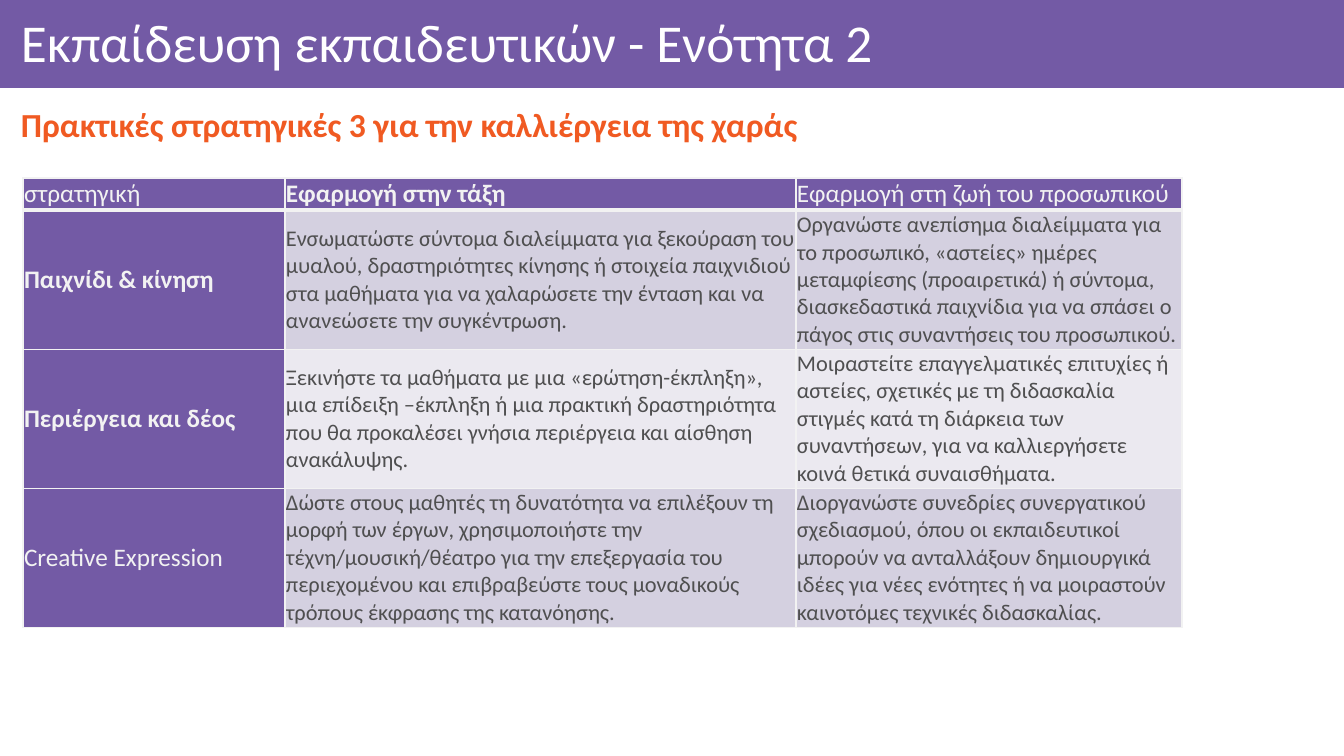
from lxml import etree
from pptx import Presentation
from pptx import util as u
from pptx.dml.color import RGBColor
from pptx.enum import shapes, text
from pptx.oxml import ns

EMU_PER_PX = 914400 / 100.8
FONT = "Calibri"
PURPLE = RGBColor(0x73, 0x5A, 0xA5)
ORANGE = RGBColor(0xF0, 0x5A, 0x22)
WHITE = RGBColor(0xFF, 0xFF, 0xFF)
OFF_WHITE = RGBColor(0xF2, 0xF2, 0xF2)
GREY = RGBColor(0x4F, 0x4F, 0x50)
BANDS = (RGBColor(0xD4, 0xD0, 0xE0), RGBColor(0xEB, 0xE9, 0xF0))

COLUMN_WIDTHS = (262, 511, 386)
ROW_HEIGHTS = (32, 139, 139, 139)
BOLD_LABELS = ("Εφαρμογή στην τάξη", "Παιχνίδι & κίνηση", "Περιέργεια και δέος")
STRATEGIES = (
    ("στρατηγική", "Εφαρμογή στην τάξη", "Εφαρμογή στη ζωή του προσωπικού"),
    ("Παιχνίδι & κίνηση",
     "Ενσωματώστε σύντομα διαλείμματα για ξεκούραση του μυαλού, δραστηριότητες κίνησης "
     "ή στοιχεία παιχνιδιού στα μαθήματα για να χαλαρώσετε την ένταση και να ανανεώσετε "
     "την συγκέντρωση.",
     "Οργανώστε ανεπίσημα διαλείμματα για το προσωπικό, «αστείες» ημέρες μεταμφίεσης "
     "(προαιρετικά) ή σύντομα, διασκεδαστικά παιχνίδια για να σπάσει ο πάγος στις "
     "συναντήσεις του προσωπικού."),
    ("Περιέργεια και δέος",
     "Ξεκινήστε τα μαθήματα με μια «ερώτηση-έκπληξη», μια επίδειξη –έκπληξη ή μια "
     "πρακτική δραστηριότητα που θα προκαλέσει γνήσια περιέργεια και αίσθηση ανακάλυψης.",
     "Μοιραστείτε επαγγελματικές επιτυχίες ή αστείες, σχετικές με τη διδασκαλία στιγμές "
     "κατά τη διάρκεια των συναντήσεων, για να καλλιεργήσετε κοινά θετικά συναισθήματα."),
    ("Creative Expression",
     "Δώστε στους μαθητές τη δυνατότητα να επιλέξουν τη μορφή των έργων, χρησιμοποιήστε "
     "την τέχνη/μουσική/θέατρο για την επεξεργασία του περιεχομένου και επιβραβεύστε τους "
     "μοναδικούς τρόπους έκφρασης της κατανόησης.",
     "Διοργανώστε συνεδρίες συνεργατικού σχεδιασμού, όπου οι εκπαιδευτικοί μπορούν να "
     "ανταλλάξουν δημιουργικά ιδέες για νέες ενότητες ή να μοιραστούν καινοτόμες τεχνικές "
     "διδασκαλίας."),
)


def px(length):
    """Turn a length in px into EMU."""
    return u.Emu(round(length * EMU_PER_PX))


def add_run(paragraph, words, size, color, bold=False):
    """Add one formatted run to a paragraph."""
    run = paragraph.add_run()
    run.text = words
    run.font.name = FONT
    run.font.size = u.Pt(size)
    run.font.bold = bold
    run.font.color.rgb = color


def add_bar(slide, left, top, width, height):
    """Add the plain purple title bar."""
    bar = slide.shapes.add_shape(
        shapes.MSO_SHAPE.RECTANGLE, px(left), px(top), px(width), px(height))
    bar.shadow.inherit = False
    bar.fill.solid()
    bar.fill.fore_color.rgb = PURPLE
    bar.line.fill.background()


def add_heading(slide, box, words, size, color, bold=False):
    """Add a single-line heading, centred vertically in its box."""
    heading = slide.shapes.add_textbox(*map(px, box))
    frame = heading.text_frame
    frame.word_wrap = True
    frame.vertical_anchor = text.MSO_ANCHOR.MIDDLE
    frame.margin_left = frame.margin_right = px(10)
    frame.margin_top = frame.margin_bottom = px(5)
    add_run(frame.paragraphs[0], words, size, color, bold)


def set_border(cell, side, points):
    """Draw one edge of a cell."""
    properties = cell._tc.get_or_add_tcPr()
    line = etree.SubElement(properties, ns.qn(f"a:ln{side}"), w=str(u.Pt(points)))
    fill = etree.SubElement(line, ns.qn("a:solidFill"))
    etree.SubElement(fill, ns.qn("a:srgbClr"), val=str(OFF_WHITE))


def fill_cell(cell, words, row, column):
    """Style a cell by its place in the table and write its text."""
    is_label = row == 0 or column == 0
    edges = {"L": 1, "R": 1, "T": 3 if row == 1 else 1, "B": 3 if row == 0 else 1}
    for side, points in edges.items():
        set_border(cell, side, points)
    cell.fill.solid()
    cell.fill.fore_color.rgb = PURPLE if is_label else BANDS[(row - 1) % 2]
    cell.vertical_anchor = text.MSO_ANCHOR.MIDDLE
    cell.margin_left = cell.margin_right = px(1)
    cell.margin_top = cell.margin_bottom = px(1)
    size, color = (18, OFF_WHITE) if is_label else (16, GREY)
    add_run(cell.text_frame.paragraphs[0], words, size, color, words in BOLD_LABELS)


def add_strategy_table(slide, left, top):
    """Add the table of strategies."""
    frame = slide.shapes.add_table(
        len(ROW_HEIGHTS), len(COLUMN_WIDTHS), px(left), px(top),
        px(sum(COLUMN_WIDTHS)), px(sum(ROW_HEIGHTS)))
    table = frame.table
    for column, width in zip(table.columns, COLUMN_WIDTHS):
        column.width = px(width)
    for row, height in zip(table.rows, ROW_HEIGHTS):
        row.height = px(height)
    for row, entries in enumerate(STRATEGIES):
        for column, words in enumerate(entries):
            fill_cell(table.cell(row, column), words, row, column)


def main():
    """Build the slide and save it."""
    presentation = Presentation()
    presentation.slide_width, presentation.slide_height = px(1344), px(756)
    slide = presentation.slides.add_slide(presentation.slide_layouts[6])
    add_bar(slide, 0, 0, 1344, 88)
    add_heading(slide, (11, 94, 1316, 60),
                "Πρακτικές στρατηγικές 3 για την καλλιέργεια της χαράς", 24, ORANGE, True)
    add_heading(slide, (11, 2, 1316, 79),
                "Εκπαίδευση εκπαιδευτικών - Ενότητα 2", 38, WHITE)
    add_strategy_table(slide, 23, 178)
    presentation.save("out.pptx")


if __name__ == "__main__":
    main()
